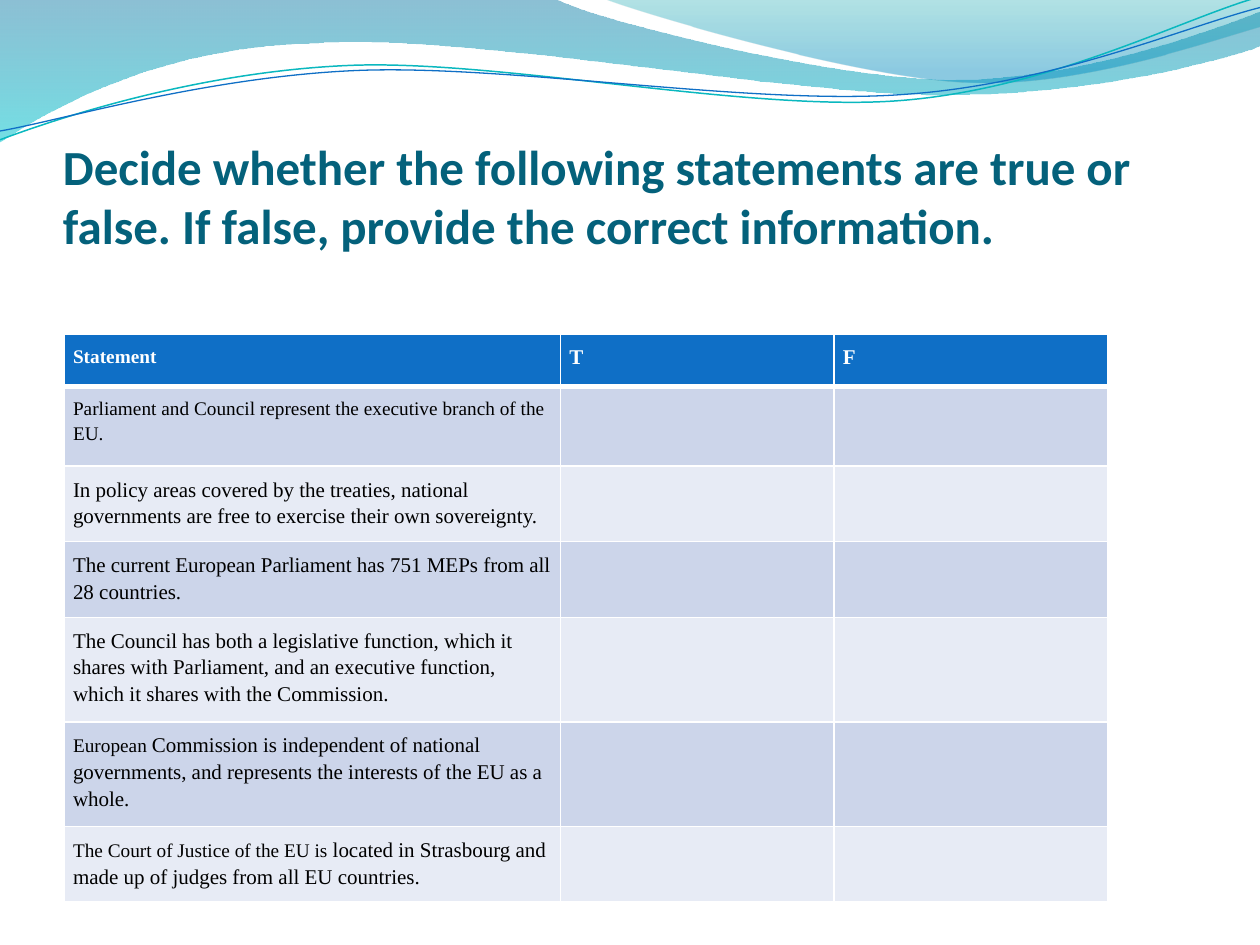
from lxml import etree
from pptx import Presentation
from pptx.dml.color import RGBColor
from pptx.enum.text import MSO_ANCHOR
from pptx.oxml.ns import qn
from pptx.util import Inches, Pt

BOTTOM = MSO_ANCHOR.BOTTOM
SERIF = "Times New Roman"
WHITE, BLACK, BLUE, TEAL = "FFFFFF", "000000", "0F6FC6", "0AB8BF"
BANDS = ("CCD5EA", "E7EBF5")

# Each wave is a list of segments: one point is a line, three are a curve
WAVE_LEFT = [[(0, 0)], [(4.4, -0.01)],
             [(4.76, 0.17), (6.64, 0.63), (7.58, 0.63)],
             [(8.53, 0.63), (9.58, 0.26), (10, 0.09)], [(10.01, 0.36)],
             [(9.83, 0.44), (8.7, 0.76), (7.46, 0.75)],
             [(6.22, 0.75), (3.82, 0.28), (2.57, 0.34)],
             [(1.29, 0.36), (0.46, 0.83), (-0.01, 1.13)], [(0, 0)]]
WAVE_RIGHT = [[(4.79, -0.01)],
              [(5.09, 0.11), (6.82, 0.62), (7.69, 0.65)],
              [(8.56, 0.69), (9.61, 0.32), (10, 0.21)], [(10, 0)],
              [(4.79, -0.01)]]
TEAL_LINE = [[(0, 1.11)],
             [(0.48, 0.93), (1.58, 0.57), (2.77, 0.52)],
             [(3.95, 0.47), (5.93, 0.89), (7.13, 0.8)],
             [(8.33, 0.71), (9.38, 0.15), (9.98, -0.02)]]
BLUE_LINE = [[(0, 1.04)],
             [(0.47, 0.96), (1.64, 0.61), (2.83, 0.56)],
             [(4.03, 0.51), (5.97, 0.84), (7.17, 0.75)],
             [(8.36, 0.67), (9.41, 0.21), (10, 0.06)]]

TITLE = ("Decide whether the following statements are true or false. "
         "If false, provide the correct information.")
HEADER = [("Statement", 11), ("T", 12), ("F", 12)]
STATEMENTS = [
    [("Parliament and Council represent the executive branch of the EU.", 11)],
    [("In policy areas covered by the treaties, national governments are free "
      "to exercise their own sovereignty.", 12)],
    [("The current European Parliament has 751 MEPs from all 28 countries.", 12)],
    [("The Council has both a legislative function, which it shares with "
      "Parliament, and an executive function, which it shares with the "
      "Commission.", 12)],
    [("European ", 11),
     ("Commission is independent of national governments, and represents the "
      "interests of the EU as a whole.", 12)],
    [("The Court of Justice of the EU is ", 11),
     ("located in Strasbourg and made up of judges from all EU countries.", 12)],
]
COL_WIDTHS = (3.94, 2.17, 2.17)
# Rows grow to fit their text; only the first statement is taller than that
ROW_HEIGHT, TALL_ROW, TALL_HEIGHT = 0.42, 1, 0.63


def rgb(color):
    return RGBColor.from_string(color)


def set_all(obj, **values):
    for name, value in values.items():
        setattr(obj, name, value)


def add_run(p, text, size, color, font, bold=False):
    r = p.add_run()
    r.text = text
    set_all(r.font, name=font, size=Pt(size), bold=bold)
    r.font.color.rgb = rgb(color)


def add_outline(slide, segments, close):
    points = [(Inches(x), Inches(y)) for seg in segments for x, y in seg]
    builder = slide.shapes.build_freeform(*points[0])
    builder.add_line_segments(points[1:], close=close)
    sp = builder.convert_to_shape()
    sp.shadow.inherit = False
    # Join the three points of each curve into one Bezier segment
    lines = iter(list(sp.element.iter(qn("a:lnTo"))))
    for seg in segments[1:]:
        first, *others = [next(lines) for _ in seg]
        if others:
            first.tag = qn("a:cubicBezTo")
        for other in others:
            first.append(other[0])
            other.getparent().remove(other)
    return sp


def add_wave(slide, segments, stops):
    sp = add_outline(slide, segments, close=True)
    sp.line.fill.background()
    sp.fill.gradient()
    sp.fill.gradient_angle = 270
    for stop, (position, color, _) in zip(sp.fill.gradient_stops, stops):
        stop.position = position
        stop.color.rgb = rgb(color)
    # Opacity goes inside each stop's colour
    for clr, stop in zip(sp.element.spPr.iter(qn("a:srgbClr")), stops):
        etree.SubElement(clr, qn("a:alpha"), val=str(stop[2] * 1000))


def add_wave_line(slide, segments, color, width):
    sp = add_outline(slide, segments, close=False)
    sp.fill.background()
    sp.line.color.rgb = rgb(color)
    sp.line.width = Pt(width)


def add_title(slide):
    box = slide.shapes.add_textbox(Inches(0.5), Inches(0.77), Inches(9), Inches(1.25))
    tf = box.text_frame
    set_all(tf, word_wrap=True, vertical_anchor=BOTTOM, margin_left=0,
            margin_right=0, margin_top=Inches(0.05), margin_bottom=0)
    add_run(tf.paragraphs[0], TITLE, 28, "04617B", "Calibri", bold=True)


def set_borders(cell, **widths):
    tc_pr = cell._tc.get_or_add_tcPr()
    for i, (side, width) in enumerate(widths.items()):
        ln = etree.Element(qn("a:ln" + side), w=str(Pt(width)))
        fill = etree.SubElement(ln, qn("a:solidFill"))
        etree.SubElement(fill, qn("a:srgbClr"), val=WHITE)
        tc_pr.insert(i, ln)


def fill_cell(cell, runs, fill, color, bold):
    cell.fill.solid()
    cell.fill.fore_color.rgb = rgb(fill)
    if runs:
        margin = Inches(0.07)
        set_all(cell, margin_left=margin, margin_right=margin,
                margin_top=margin, margin_bottom=margin)
        p = cell.text_frame.paragraphs[0]
        set_all(p, line_spacing=1.15, space_after=Pt(10))
        for text, size in runs:
            add_run(p, text, size, color, SERIF, bold)


def add_statement_table(slide):
    rows = [[[run] for run in HEADER]] + [[runs, [], []] for runs in STATEMENTS]
    table = slide.shapes.add_table(
        len(rows), len(COL_WIDTHS), Inches(0.51), Inches(2.65),
        Inches(8.27), Inches(4.5)).table
    for column, width in zip(table.columns, COL_WIDTHS):
        column.width = Inches(width)
    for i, row in enumerate(rows):
        table.rows[i].height = Inches(TALL_HEIGHT if i == TALL_ROW else ROW_HEIGHT)
        head = i == 0
        fill = BLUE if head else BANDS[(i - 1) % 2]
        for j, runs in enumerate(row):
            cell = table.cell(i, j)
            fill_cell(cell, runs, fill, WHITE if head else BLACK, head)
            set_borders(cell, L=1, R=1, T=3 if i == 1 else 1, B=3 if head else 1)


def main():
    prs = Presentation()
    prs.slide_width, prs.slide_height = Inches(10), Inches(7.5)
    slide = prs.slides.add_slide(prs.slide_layouts[6])

    # Wave decoration
    add_wave(slide, WAVE_LEFT, [(0, "0074A1", 45), (1, "00C6CF", 55)])
    add_wave(slide, WAVE_RIGHT, [(0, "00A1A9", 30), (0.8, "008BBF", 45)])
    add_wave_line(slide, TEAL_LINE, TEAL, 0.85)
    add_wave_line(slide, BLUE_LINE, BLUE, 0.75)

    # Content
    add_title(slide)
    add_statement_table(slide)
    prs.save("out.pptx")


if __name__ == "__main__":
    main()
